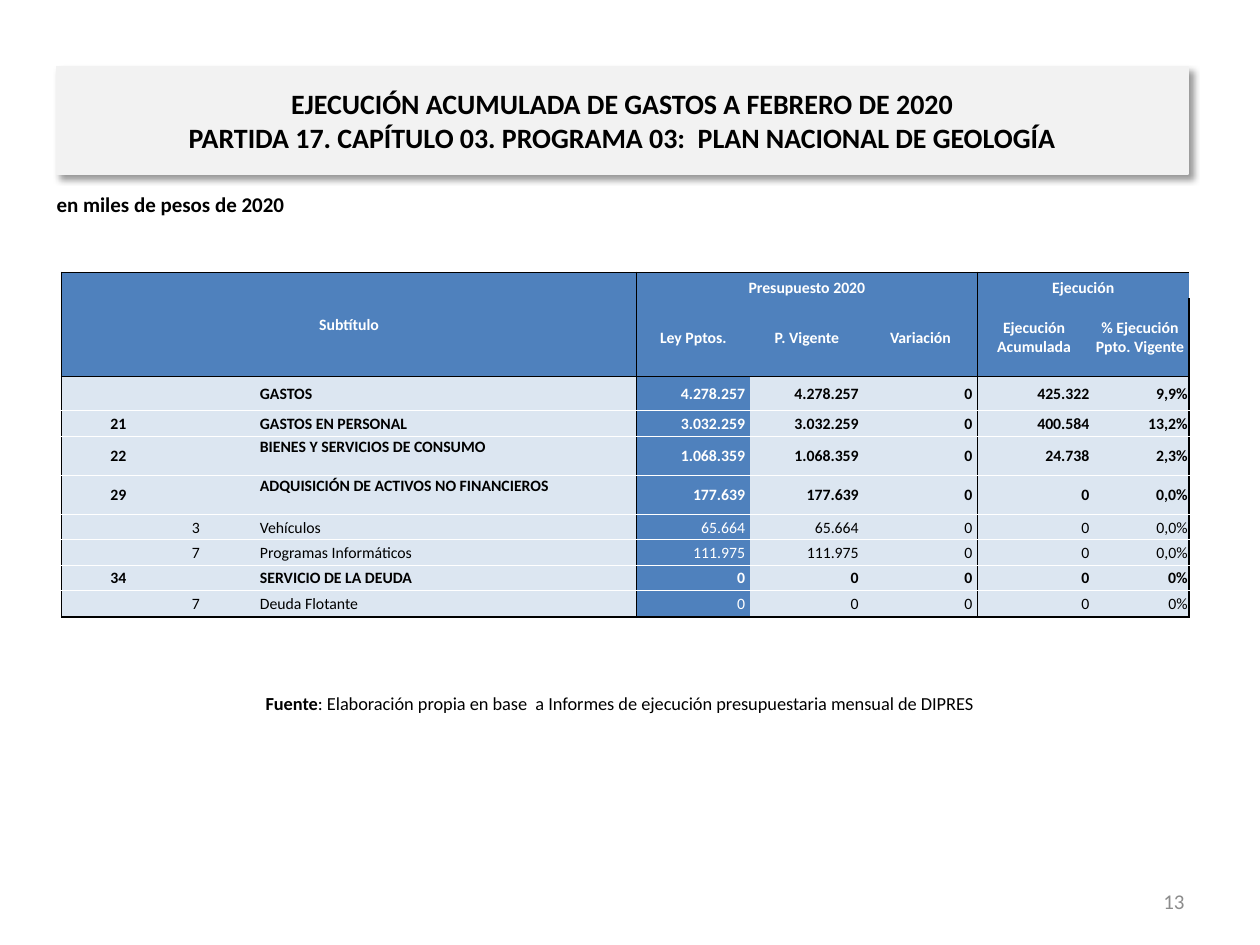
import pptx
import pptx.dml.color
import pptx.enum.text
import pptx.oxml
import pptx.oxml.ns
import pptx.util
from lxml import etree
from pptx.dml.color import RGBColor
from pptx.enum.text import MSO_ANCHOR, PP_ALIGN
from pptx.util import Cm

BLACK = RGBColor(0x00, 0x00, 0x00)
WHITE = RGBColor(0xFF, 0xFF, 0xFF)
GRAY = RGBColor(0x8C, 0x8C, 0x8C)
TITLE_FILL = RGBColor(0xF2, 0xF2, 0xF2)
BLUE = RGBColor(0x4F, 0x81, 0xBD)
PALE_BLUE = RGBColor(0xDC, 0xE6, 0xF1)

FONT = "Calibri"
TABLE_SIZE = 9
COLUMN_WIDTHS = [2.29, 0.84, 0.84, 7.62, 2.29, 2.29, 2.29, 2.29, 1.98]
HEADER_HEIGHTS = [0.52, 1.58]
BODY_HEIGHTS = [0.69, 0.51, 0.79, 0.79, 0.51, 0.51, 0.51, 0.54]
HEADER_ROWS = len(HEADER_HEIGHTS)
LABEL_COLUMN = 3
LAW_COLUMN = 4
GROUP_ENDS = (3, 6)

# First cell, last cell, text, anchor
HEADERS = [
    ((0, 0), (1, 3), "Subtítulo", MSO_ANCHOR.MIDDLE),
    ((0, 4), (0, 6), "Presupuesto 2020", MSO_ANCHOR.BOTTOM),
    ((0, 7), (0, 8), "Ejecución", MSO_ANCHOR.BOTTOM),
    ((1, 4), (1, 4), "Ley Pptos.", MSO_ANCHOR.MIDDLE),
    ((1, 5), (1, 5), "P. Vigente", MSO_ANCHOR.MIDDLE),
    ((1, 6), (1, 6), "Variación", MSO_ANCHOR.MIDDLE),
    ((1, 7), (1, 7), "Ejecución Acumulada", MSO_ANCHOR.MIDDLE),
    ((1, 8), (1, 8), "% Ejecución Ppto. Vigente", MSO_ANCHOR.MIDDLE),
]

# Subtitle, item, label, law, current budget, variation, executed, percentage
BUDGET = [
    ("", "", "GASTOS", "4.278.257", "4.278.257", "0", "425.322", "9,9%"),
    ("21", "", "GASTOS EN PERSONAL", "3.032.259", "3.032.259", "0", "400.584", "13,2%"),
    ("22", "", "BIENES Y SERVICIOS DE CONSUMO", "1.068.359", "1.068.359", "0", "24.738", "2,3%"),
    ("29", "", "ADQUISICIÓN DE ACTIVOS NO FINANCIEROS", "177.639", "177.639", "0", "0", "0,0%"),
    ("", "3", "Vehículos", "65.664", "65.664", "0", "0", "0,0%"),
    ("", "7", "Programas Informáticos", "111.975", "111.975", "0", "0", "0,0%"),
    ("34", "", "SERVICIO DE LA DEUDA", "0", "0", "0", "0", "0%"),
    ("", "7", "Deuda Flotante", "0", "0", "0", "0", "0%"),
]


def format_text(text_frame, size, color, bold, alignment):
    for paragraph in text_frame.paragraphs:
        paragraph.alignment = alignment
        for run in paragraph.runs:
            run.font.name = FONT
            run.font.size = pptx.util.Pt(size)
            run.font.bold = bold
            run.font.color.rgb = color


def add_text(slide, box, text, size, color, bold, alignment, anchor):
    text_frame = slide.shapes.add_textbox(*map(Cm, box)).text_frame
    text_frame.word_wrap = True
    text_frame.vertical_anchor = anchor
    text_frame.text = text
    format_text(text_frame, size, color, bold, alignment)
    return text_frame


def add_shadow(shape):
    shape.shadow.inherit = False
    effects = shape._element.spPr.find(pptx.oxml.ns.qn("a:effectLst"))
    effects.append(pptx.oxml.parse_xml(
        f'<a:outerShdw {pptx.oxml.ns.nsdecls("a")} blurRad="50800" dist="38100" '
        'dir="2700000" algn="tl" rotWithShape="0">'
        '<a:srgbClr val="000000"><a:alpha val="40000"/></a:srgbClr></a:outerShdw>'))


def set_title(slide, text):
    title = slide.shapes.title
    title.left, title.top, title.width, title.height = map(Cm, (1.14, 1.35, 22.81, 2.16))
    title.fill.solid()
    title.fill.fore_color.rgb = TITLE_FILL
    title.line.color.rgb = TITLE_FILL
    title.line.width = pptx.util.Pt(0.75)
    add_shadow(title)
    title.text_frame.text = text
    title.text_frame.auto_size = pptx.enum.text.MSO_AUTO_SIZE.NONE
    title.text_frame.vertical_anchor = MSO_ANCHOR.MIDDLE
    format_text(title.text_frame, 16, BLACK, True, PP_ALIGN.CENTER)


def horizontal_border(edge):
    """Return colour and width of the line above row number `edge`."""
    if edge in (0, HEADER_ROWS + len(BUDGET)):
        return BLACK, 1
    if edge == HEADER_ROWS:
        return BLACK, 0.5
    return (WHITE, 0.5) if edge > HEADER_ROWS else None


def vertical_border(edge):
    """Return colour and width of the line left of column number `edge`."""
    if edge in (0, len(COLUMN_WIDTHS)):
        return BLACK, 1
    return (BLACK, 0.5) if edge - 1 in GROUP_ENDS else None


def set_borders(cell, row, column):
    properties = cell._tc.get_or_add_tcPr()
    borders = {
        "a:lnL": vertical_border(column),
        "a:lnR": vertical_border(column + 1),
        "a:lnT": horizontal_border(row),
        "a:lnB": horizontal_border(row + 1),
    }
    qualified = pptx.oxml.ns.qn
    for tag, border in borders.items():
        line = etree.SubElement(properties, qualified(tag))
        if border is None:
            line.set("w", "0")
            etree.SubElement(line, qualified("a:noFill"))
            continue
        color, width = border
        line.set("w", str(pptx.util.Pt(width)))
        fill = etree.SubElement(line, qualified("a:solidFill"))
        etree.SubElement(fill, qualified("a:srgbClr"), val=str(color))


def style_cell(cell, row, column):
    set_borders(cell, row, column)
    cell.fill.solid()
    is_blue = row < HEADER_ROWS or column == LAW_COLUMN
    cell.fill.fore_color.rgb = BLUE if is_blue else PALE_BLUE
    cell.margin_left = cell.margin_right = cell.margin_top = Cm(0.03)
    cell.margin_bottom = 0
    # An empty cell must not push its row beyond the set height
    cell.text_frame.paragraphs[0].font.size = pptx.util.Pt(TABLE_SIZE)


def write_cell(cell, text, color, bold, alignment, anchor=MSO_ANCHOR.MIDDLE):
    cell.text_frame.text = text
    cell.vertical_anchor = anchor
    format_text(cell.text_frame, TABLE_SIZE, color, bold, alignment)


def fill_header(table):
    for first, last, text, anchor in HEADERS:
        cell = table.cell(*first)
        if first != last:
            cell.merge(table.cell(*last))
        write_cell(cell, text, WHITE, True, PP_ALIGN.CENTER, anchor)


def fill_body_row(table, row, record):
    code, item, *values = record
    bold = not item
    for column, text in ((0, code), (1, item)):
        if text:
            write_cell(table.cell(row, column), text, BLACK, bold, PP_ALIGN.CENTER)
    for column, text in enumerate(values, LABEL_COLUMN):
        cell = table.cell(row, column)
        if column == LABEL_COLUMN:
            is_tall = table.rows[row].height > Cm(0.7)
            anchor = MSO_ANCHOR.TOP if is_tall else MSO_ANCHOR.MIDDLE
            write_cell(cell, text, BLACK, bold, PP_ALIGN.LEFT, anchor)
        else:
            color = WHITE if column == LAW_COLUMN else BLACK
            write_cell(cell, text, color, bold, PP_ALIGN.RIGHT)
            if column <= GROUP_ENDS[-1]:
                cell.margin_right = Cm(0.1)


def add_budget_table(slide):
    heights = HEADER_HEIGHTS + BODY_HEIGHTS
    table = slide.shapes.add_table(
        len(heights), len(COLUMN_WIDTHS), Cm(1.24), Cm(5.49),
        Cm(sum(COLUMN_WIDTHS)), Cm(sum(heights))).table
    table.first_row = table.horz_banding = False
    for table_column, width in zip(table.columns, COLUMN_WIDTHS):
        table_column.width = Cm(width)
    for row, height in enumerate(heights):
        table.rows[row].height = Cm(height)
        for column in range(len(COLUMN_WIDTHS)):
            style_cell(table.cell(row, column), row, column)
    fill_header(table)
    for row, record in enumerate(BUDGET, HEADER_ROWS):
        fill_body_row(table, row, record)


def main():
    presentation = pptx.Presentation()
    presentation.slide_width, presentation.slide_height = Cm(25.4), Cm(19.05)
    slide = presentation.slides.add_slide(presentation.slide_layouts[5])
    set_title(slide, "EJECUCIÓN ACUMULADA DE GASTOS A FEBRERO DE 2020\v"
                     "PARTIDA 17. CAPÍTULO 03. PROGRAMA 03:  PLAN NACIONAL DE GEOLOGÍA")
    add_text(slide, (0.89, 3.73, 20.7, 0.99), "en miles de pesos de 2020",
             12, BLACK, True, PP_ALIGN.LEFT, MSO_ANCHOR.TOP)
    add_budget_table(slide)
    source = add_text(slide, (1.09, 13.79, 22.81, 0.79), "Fuente",
                      10.5, BLACK, True, PP_ALIGN.CENTER, MSO_ANCHOR.MIDDLE)
    detail = source.paragraphs[0].add_run()
    detail.text = ": Elaboración propia en base  a Informes de ejecución presupuestaria mensual de DIPRES"
    detail.font.name, detail.font.size = FONT, pptx.util.Pt(10.5)
    detail.font.color.rgb = BLACK
    add_text(slide, (18.21, 17.65, 5.92, 1.02), "13",
             12, GRAY, False, PP_ALIGN.RIGHT, MSO_ANCHOR.MIDDLE)
    presentation.save("out.pptx")


if __name__ == "__main__":
    main()
